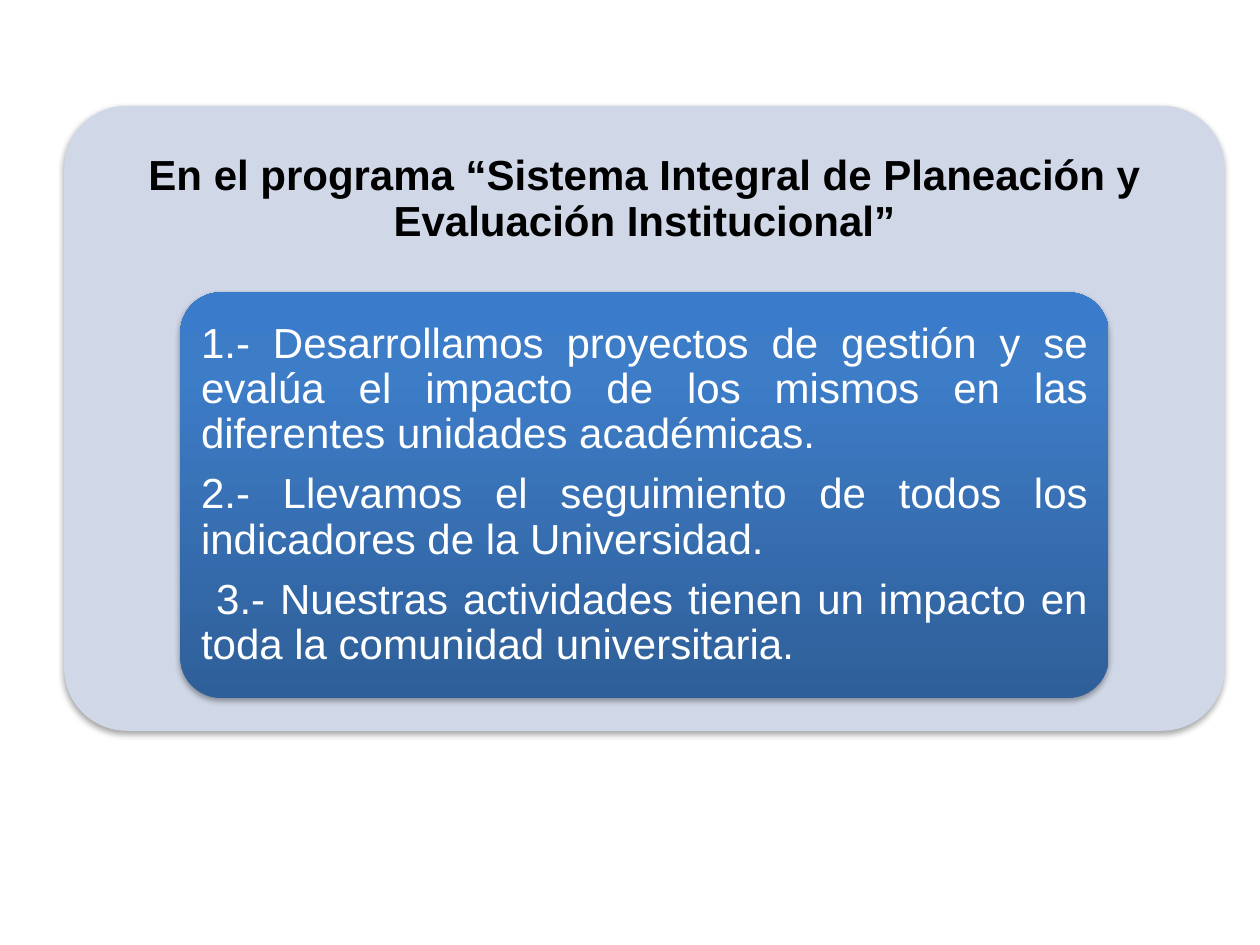
from copy import deepcopy

from lxml import etree
from pptx import Presentation
from pptx.dml.color import RGBColor
from pptx.enum.shapes import MSO_SHAPE
from pptx.enum.text import MSO_ANCHOR, PP_ALIGN
from pptx.oxml.ns import qn
from pptx.util import Inches, Pt

ROUNDED = MSO_SHAPE.ROUNDED_RECTANGLE
MIDDLE = MSO_ANCHOR.MIDDLE
CENTER, JUSTIFY = PP_ALIGN.CENTER, PP_ALIGN.JUSTIFY

# Each paragraph: text, first-line indent in inches
TITLE = [("En el programa “Sistema Integral de Planeación y Evaluación Institucional”", 0)]
POINTS = [
    ("1.- Desarrollamos proyectos de gestión y se evalúa el impacto de los mismos "
     "en las diferentes unidades académicas.", 0),
    ("2.- Llevamos el seguimiento de todos los indicadores de la Universidad.", 0),
    ("3.- Nuestras actividades tienen un impacto en toda la comunidad universitaria.", 0.12),
]

THEME = {
    "font": "Arial",
    "size": 24,
    "title": "000000",
    "body": "FFFFFF",
    "panel": "D0D8E8",
    "card": [(0, "2F5F99"), (0.8, "3D7CC7"), (1, "3A7CCB")],
    "shadow": "000000",
}

# left, top, width, height
PANEL = (0.51, 0.84, 9.21, 4.96)
TITLE_BOX = (*PANEL[:3], 1.49)
CARD_WIDTH = 0.8 * PANEL[2]
CARD = (PANEL[0] + (PANEL[2] - CARD_WIDTH) / 2, 2.32, CARD_WIDTH, 3.22)
CARD_PAD = 0.095
POINTS_BOX = (CARD[0] + CARD_PAD, CARD[1] + CARD_PAD,
              CARD[2] - 2 * CARD_PAD, CARD[3] - 2 * CARD_PAD)


def inches(box):
    return [Inches(v) for v in box]


def add_shadow(shape):
    """Give the shape a soft shadow falling straight down."""
    shape.shadow.inherit = False
    effects = shape._element.spPr.find(qn("a:effectLst"))
    outer = etree.SubElement(effects, qn("a:outerShdw"), blurRad=str(Pt(3.1)),
                             dist=str(Pt(1.8)), dir="5400000", rotWithShape="0")
    color = etree.SubElement(outer, qn("a:srgbClr"), val=THEME["shadow"])
    etree.SubElement(color, qn("a:alpha"), val="35000")


def add_rounded(slide, box):
    shape = slide.shapes.add_shape(ROUNDED, *inches(box))
    shape.adjustments[0] = 0.1
    shape.line.fill.background()
    add_shadow(shape)
    return shape


def fill_gradient(shape, stops):
    """Fill the shape with stops that run from bottom to top."""
    shape.fill.gradient()
    shape.fill.gradient_angle = 90
    stop_list = shape._element.spPr.find(qn("a:gradFill")).find(qn("a:gsLst"))
    while len(stop_list) < len(stops):
        stop_list.append(deepcopy(stop_list[0]))
    for stop, (position, color) in zip(shape.fill.gradient_stops, stops):
        stop.position = position
        stop.color.rgb = RGBColor.from_string(color)


def add_text(slide, box, paragraphs, align, color, insets, bold=False):
    """Add a middle-anchored text box; insets are horizontal and vertical."""
    tf = slide.shapes.add_textbox(*inches(box)).text_frame
    tf.word_wrap = True
    tf.vertical_anchor = MIDDLE
    tf.margin_left = tf.margin_right = Inches(insets[0])
    tf.margin_top = tf.margin_bottom = Inches(insets[1])
    for i, (text, indent) in enumerate(paragraphs):
        p = tf.add_paragraph() if i else tf.paragraphs[0]
        p.text = text
        p.alignment = align
        p.line_spacing = 0.9
        p.space_after = Pt(0.35 * THEME["size"])
        if indent:
            p._p.get_or_add_pPr().set("indent", str(Inches(indent)))
        p.font.name = THEME["font"]
        p.font.size = Pt(THEME["size"])
        p.font.bold = bold
        p.font.color.rgb = RGBColor.from_string(color)


def main():
    prs = Presentation()
    prs.slide_width, prs.slide_height = Inches(10), Inches(7.5)
    s = prs.slides.add_slide(prs.slide_layouts[6])

    panel = add_rounded(s, PANEL)
    panel.fill.solid()
    panel.fill.fore_color.rgb = RGBColor.from_string(THEME["panel"])
    add_text(s, TITLE_BOX, TITLE, CENTER, THEME["title"], (0.1, 0.1), bold=True)

    card = add_rounded(s, CARD)
    fill_gradient(card, THEME["card"])
    add_text(s, POINTS_BOX, POINTS, JUSTIFY, THEME["body"], (0.07, 0.05))

    prs.save("out.pptx")


if __name__ == "__main__":
    main()
